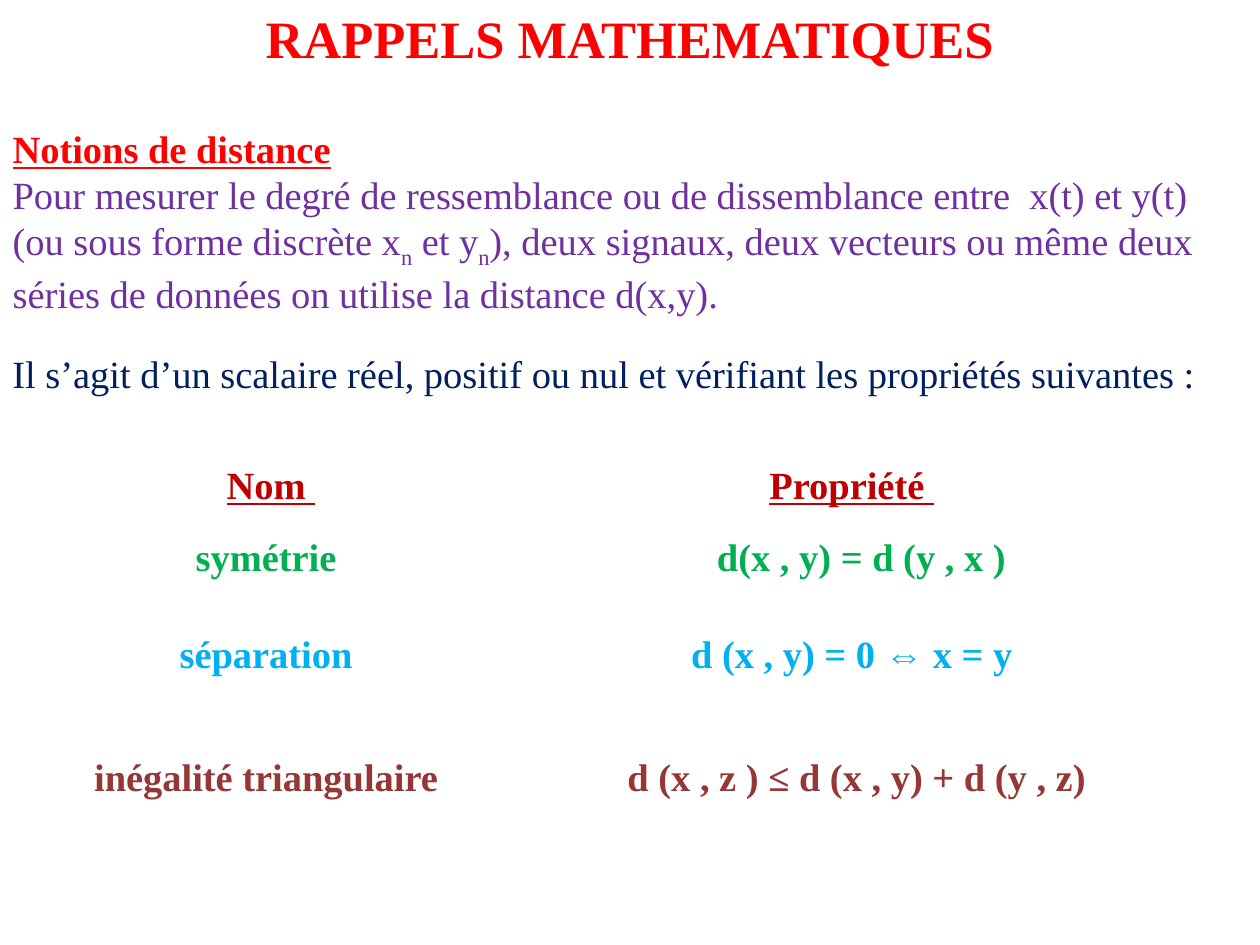
import pptx
import pptx.util
import pptx.dml.color
import pptx.enum.text
import pptx.oxml

RGBColor = pptx.dml.color.RGBColor
PP_ALIGN = pptx.enum.text.PP_ALIGN
ANCHOR = pptx.enum.text.MSO_ANCHOR
Inches = pptx.util.Inches
Pt = pptx.util.Pt

RED = RGBColor(0xFF, 0x00, 0x00)
PURPLE = RGBColor(0x70, 0x30, 0xA0)
NAVY = RGBColor(0x00, 0x20, 0x60)
DARK_RED = RGBColor(0xC0, 0x00, 0x00)
GREEN = RGBColor(0x00, 0xB0, 0x50)
BLUE = RGBColor(0x00, 0xB0, 0xF0)
BROWN = RGBColor(0x95, 0x37, 0x35)

prs = pptx.Presentation()
prs.slide_width = Inches(10)
prs.slide_height = Inches(7.5)
W = prs.slide_width
s = prs.slides.add_slide(prs.slide_layouts[1])


def add_run(p, text, color, size=22, bold=False, underline=False, baseline=0):
    r = p.add_run()
    r.text = text
    style = {"name": "Times New Roman", "size": Pt(size), "bold": bold, "underline": underline}
    for name, value in style.items():
        setattr(r.font, name, value)
    r.font.color.rgb = color
    if baseline:
        r._r.get_or_add_rPr().set("baseline", str(baseline * 1000))


def place(sp, top, height):
    box = {"left": 0, "top": Inches(top), "width": W, "height": Inches(height)}
    for name, value in box.items():
        setattr(sp, name, value)
    frame = {"word_wrap": True, "vertical_anchor": ANCHOR.TOP,
             "auto_size": pptx.enum.text.MSO_AUTO_SIZE.SHAPE_TO_FIT_TEXT}
    for name, value in frame.items():
        setattr(sp.text_frame, name, value)
    return sp.text_frame


tf = place(s.shapes.title, 0, 0.61)
tf.paragraphs[0].alignment = PP_ALIGN.CENTER
add_run(tf.paragraphs[0], "RAPPELS MATHEMATIQUES", RED, size=30, bold=True)

tf = place(s.placeholders[1], 0.94, 1.58)
heading, body = tf.paragraphs[0], tf.add_paragraph()
for p in (heading, body):
    p.space_before = Pt(0)
    pPr = p._p.get_or_add_pPr()
    pPr.set("marL", "0")
    pPr.set("indent", "0")
    pPr.append(pptx.oxml.parse_xml(
        '<a:buNone xmlns:a="http://schemas.openxmlformats.org/drawingml/2006/main"/>'))
add_run(heading, "Notions de distance", RED, bold=True, underline=True)
for text, baseline in [
    ("Pour mesurer le degré de ressemblance ou de dissemblance entre  x(t) et y(t) "
     "(ou sous forme discrète x", 0),
    ("n", -25),
    (" et y", 0),
    ("n", -25),
    ("), deux signaux, deux vecteurs ou même deux séries de données "
     "on utilise la distance d(x,y).", 0),
]:
    add_run(body, text, PURPLE, baseline=baseline)

tf = place(s.shapes.add_textbox(0, 0, W, Inches(0.47)), 2.73, 0.47)
add_run(tf.paragraphs[0],
        "Il s’agit d’un scalaire réel, positif ou nul et vérifiant les propriétés suivantes :", NAVY)

rows = [
    (0.47, DARK_RED, "Nom ", "Propriété "),
    (0.67, GREEN, "symétrie ", "\xa0 d(x , y) = d (y , x )"),
    (0.87, BLUE, "séparation ", "d (x , y) = 0 ⇔ x = y"),
    (1.08, BROWN, "inégalité triangulaire ", " d (x , z ) ≤ d (x , y) + d (y , z)"),
]
table = s.shapes.add_table(len(rows), 2, Inches(0.55), Inches(3.63),
                           Inches(9.22), Inches(3.09)).table
for name in ("first_row", "horz_banding"):
    setattr(table, name, False)
for column, width in zip(table.columns, (3.2, 6.02)):
    column.width = Inches(width)
for i, (height, color, *texts) in enumerate(rows):
    table.rows[i].height = Inches(height)
    for cell, text in zip(table.rows[i].cells, texts):
        cell.fill.background()
        cell.vertical_anchor = ANCHOR.MIDDLE
        p = cell.text_frame.paragraphs[0]
        p.alignment = PP_ALIGN.CENTER
        add_run(p, text, color, bold=True, underline=i == 0)

prs.save("out.pptx")
